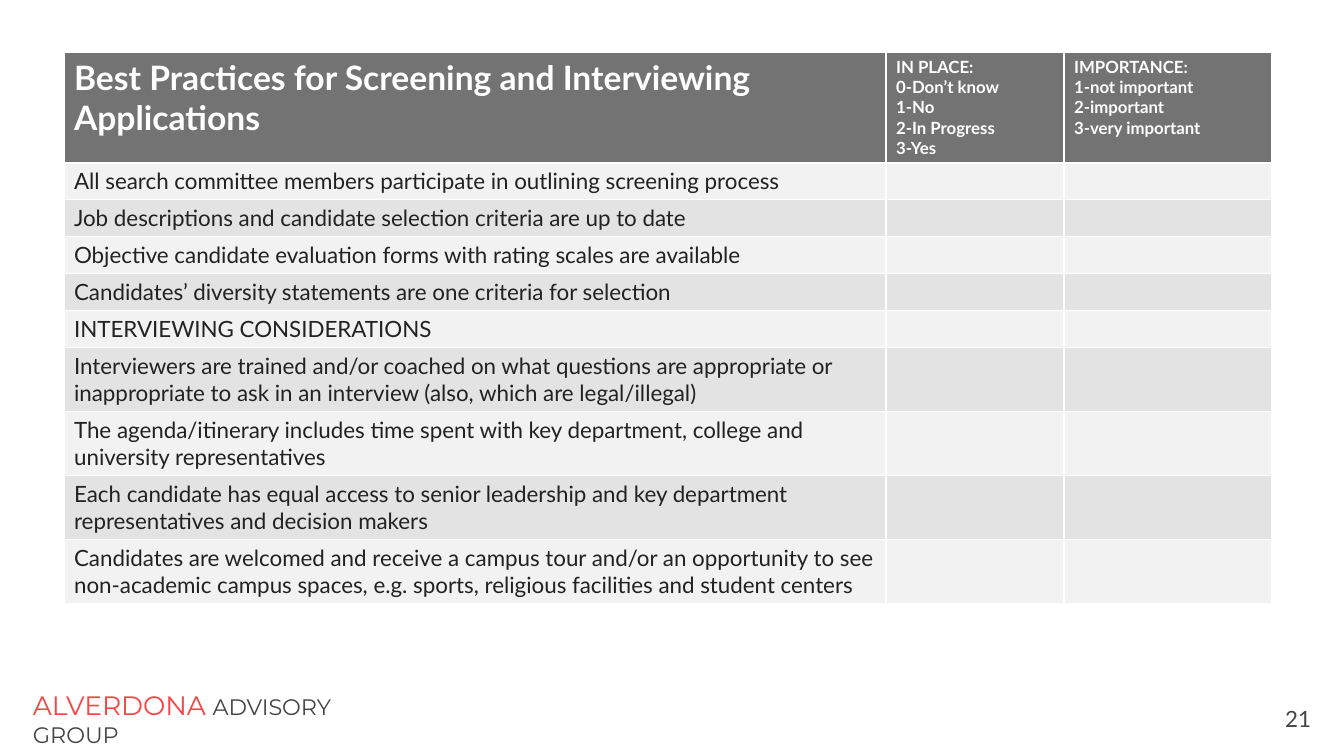
import dataclasses

import lxml.etree
import pptx
import pptx.dml.color
import pptx.enum.text
import pptx.oxml.ns
import pptx.util

PX = 914400 / 100.8


@dataclasses.dataclass(frozen=True)
class Theme:
    body_font: str = "Lato"
    brand_font: str = "Montserrat"
    header_fill: str = "737373"
    bands: tuple = ("F2F2F2", "E3E3E3")
    header_text: str = "FFFFFF"
    body_text: str = "222222"
    footer_text: str = "444444"
    accent: str = "F44647"
    heading_size: int = 24
    scale_size: int = 12
    body_size: int = 16
    brand_size: int = 19
    gap_size: int = 18


THEME = Theme()

COLUMN_WIDTHS = (822, 178, 208)
HEADER_HEIGHT, SINGLE_HEIGHT, DOUBLE_HEIGHT = 109, 37, 64

HEADINGS = (
    (["Best Practices for Screening and Interviewing Applications"], THEME.heading_size),
    (["IN PLACE:", "0-Don’t know", "1-No", "2-In Progress", "3-Yes"], THEME.scale_size),
    (["IMPORTANCE:", "1-not important", "2-important", "3-very important"], THEME.scale_size),
)

PRACTICES = (
    ("All search committee members participate in outlining screening process", SINGLE_HEIGHT),
    ("Job descriptions and candidate selection criteria are up to date", SINGLE_HEIGHT),
    ("Objective candidate evaluation forms with rating scales are available", SINGLE_HEIGHT),
    ("Candidates’ diversity statements are one criteria for selection", SINGLE_HEIGHT),
    ("INTERVIEWING CONSIDERATIONS", SINGLE_HEIGHT),
    ("Interviewers are trained and/or coached on what questions are appropriate or "
     "inappropriate to ask in an interview (also, which are legal/illegal)", DOUBLE_HEIGHT),
    ("The agenda/itinerary includes time spent with key department, college and "
     "university representatives", DOUBLE_HEIGHT),
    ("Each candidate has equal access to senior leadership and key department "
     "representatives and decision makers", DOUBLE_HEIGHT),
    ("Candidates are welcomed and receive a campus tour and/or an opportunity to see "
     "non-academic campus spaces, e.g. sports, religious facilities and student centers",
     DOUBLE_HEIGHT),
)


def px(length):
    return pptx.util.Emu(round(length * PX))


def rgb(color):
    return pptx.dml.color.RGBColor.from_string(color)


def add_run(paragraph, text, size, color, font=THEME.body_font, bold=False):
    run = paragraph.add_run()
    run.text = text
    formats = {"name": font, "size": pptx.util.Pt(size), "bold": bold}
    for attribute, value in formats.items():
        setattr(run.font, attribute, value)
    run.font.color.rgb = rgb(color)


def fill_cell(cell, color):
    cell.fill.solid()
    cell.fill.fore_color.rgb = rgb(color)


def size_empty_cell(cell):
    """Keep the default text size from stretching a row that has a blank cell."""
    mark = cell.text_frame.paragraphs[0]._p.get_or_add_endParaRPr()
    mark.set("sz", str(THEME.body_size * 100))
    latin = lxml.etree.SubElement(mark, pptx.oxml.ns.qn("a:latin"))
    latin.set("typeface", THEME.body_font)


def add_header_row(table):
    table.rows[0].height = px(HEADER_HEIGHT)
    for cell, (lines, size) in zip(table.rows[0].cells, HEADINGS):
        fill_cell(cell, THEME.header_fill)
        frame = cell.text_frame
        for index, line in enumerate(lines):
            paragraph = frame.add_paragraph() if index else frame.paragraphs[0]
            add_run(paragraph, line, size, THEME.header_text, bold=True)


def add_practice_rows(table):
    for index, (practice, height) in enumerate(PRACTICES):
        row = table.rows[index + 1]
        row.height = px(height)
        for cell in row.cells:
            fill_cell(cell, THEME.bands[index % 2])
        statement, *ratings = row.cells
        add_run(statement.text_frame.paragraphs[0], practice, THEME.body_size, THEME.body_text)
        for rating in ratings:
            size_empty_cell(rating)


def add_checklist(slide, left, top):
    height = HEADER_HEIGHT + sum(height for _, height in PRACTICES)
    table = slide.shapes.add_table(
        len(PRACTICES) + 1, len(COLUMN_WIDTHS),
        px(left), px(top), px(sum(COLUMN_WIDTHS)), px(height)).table
    for column, width in zip(table.columns, COLUMN_WIDTHS):
        column.width = px(width)
    add_header_row(table)
    add_practice_rows(table)


def add_label(slide, box):
    """Add a wrapping text box and return its first paragraph."""
    frame = slide.shapes.add_textbox(*map(px, box)).text_frame
    frame.word_wrap = True
    return frame.paragraphs[0]


def add_footer(slide, left, top):
    brand = add_label(slide, (left, top, 341, 50))
    add_run(brand, "ALVERDONA", THEME.brand_size, THEME.accent, THEME.brand_font)
    add_run(brand, " ", THEME.gap_size, THEME.footer_text)
    add_run(brand, "ADVISORY GROUP", THEME.body_size, THEME.footer_text, THEME.brand_font)

    page_number = add_label(slide, (left + 1192, top + 16, 106, 37))
    page_number.alignment = pptx.enum.text.PP_ALIGN.RIGHT
    add_run(page_number, "21", THEME.body_size, THEME.footer_text)


def main():
    deck = pptx.Presentation()
    deck.slide_width, deck.slide_height = px(1344), px(756)
    slide = deck.slides.add_slide(deck.slide_layouts[6])
    add_footer(slide, 23, 684)
    add_checklist(slide, 64, 52)
    deck.save("out.pptx")


if __name__ == "__main__":
    main()
